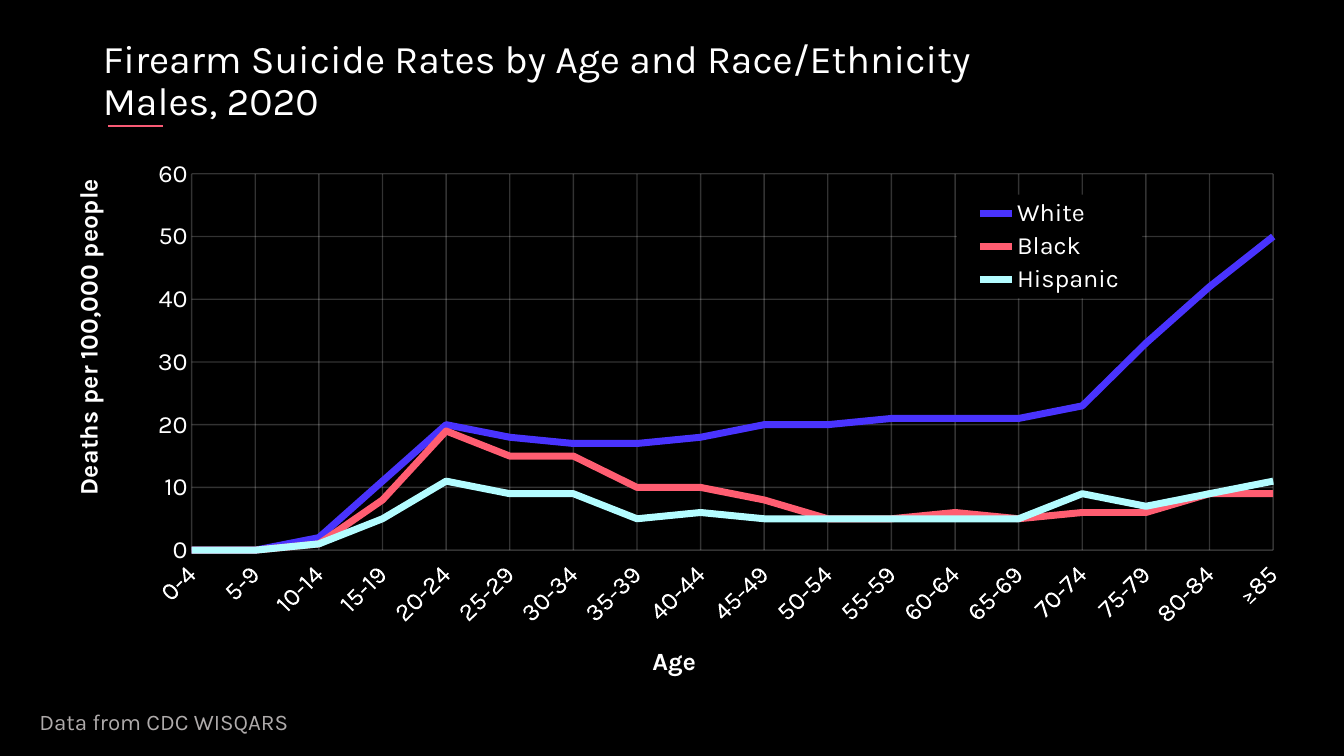
"""Build a slide with a line chart of firearm suicide rates among males by age."""
from lxml.etree import SubElement
from pptx import Presentation
from pptx.chart.data import CategoryChartData
from pptx.dml.color import RGBColor
from pptx.enum.chart import XL_CHART_TYPE, XL_LEGEND_POSITION, XL_TICK_LABEL_POSITION, XL_TICK_MARK
from pptx.enum.shapes import MSO_CONNECTOR
from pptx.enum.text import MSO_ANCHOR, MSO_AUTO_SIZE, PP_ALIGN
from pptx.oxml import parse_xml
from pptx.oxml.ns import nsdecls, qn
from pptx.util import Inches, Pt

FONT = "Karla"
COLORS = {"back": "000000", "text": "FFFFFF", "note": "AFABAB", "rule": "F85B75",
          "White": "4933FE", "Black": "FF5D71", "Hispanic": "B3FCFF"}
RATES = {
    "White": [0, 0, 2, 11, 20, 18, 17, 17, 18, 20, 20, 21, 21, 21, 23, 33, 42, 50],
    "Black": [0, 0, 1, 8, 19, 15, 15, 10, 10, 8, 5, 5, 6, 5, 6, 6, 9, 9],
    "Hispanic": [0, 0, 1, 5, 11, 9, 9, 5, 6, 5, 5, 5, 5, 5, 9, 7, 9, 11],
}


def style(font, size, color, bold=False):
    font.name = FONT
    font.size = Pt(size)
    font.bold = bold
    font.color.rgb = RGBColor.from_string(COLORS[color])


def place(part, index, inner=False, **spots):
    for old in part.findall(qn("c:layout")):
        part.remove(old)
    layout = parse_xml(f"<c:layout {nsdecls('c')}><c:manualLayout/></c:layout>")
    manual = layout[0]
    if inner:
        SubElement(manual, qn("c:layoutTarget")).set("val", "inner")
    for key in ("x", "y"):
        SubElement(manual, qn(f"c:{key}Mode")).set("val", "edge")
    for key, value in spots.items():
        SubElement(manual, qn(f"c:{key}")).set("val", str(value))
    part.insert(index, layout)


deck = Presentation()
deck.slide_width, deck.slide_height = Inches(13.33), Inches(7.5)
slide = deck.slides.add_slide(deck.slide_layouts[1])
fill = slide.background.fill
fill.solid()
fill.fore_color.rgb = RGBColor.from_string(COLORS["back"])

title, note = slide.shapes.title, slide.placeholders[1]
for box, spot, lines, size, color, anchor in (
    (title, (0.92, 0.37, 11.5, 0.88),
     ["Firearm Suicide Rates by Age and Race/Ethnicity", "Males, 2020"],
     28, "text", MSO_ANCHOR.MIDDLE),
    (note, (0.29, 7.01, 9.78, 0.42), ["Data from CDC WISQARS"], 16, "note", MSO_ANCHOR.TOP),
):
    box.left, box.top, box.width, box.height = map(Inches, spot)
    frame = box.text_frame
    frame.word_wrap = True
    frame.auto_size = MSO_AUTO_SIZE.NONE
    frame.vertical_anchor = anchor
    para = frame.paragraphs[0]
    props = para._p.get_or_add_pPr()
    props.set("marL", "0")
    props.set("indent", "0")
    SubElement(props, qn("a:buNone"))
    para.alignment = PP_ALIGN.LEFT
    para.line_spacing = 0.9
    para.space_before = Pt(0)
    for row, text in enumerate(lines):
        if row:
            para.add_line_break()
        run = para.add_run()
        run.text = text
        style(run.font, size, color)

rule = slide.shapes.add_connector(
    MSO_CONNECTOR.STRAIGHT, Inches(1.07), Inches(1.25), Inches(1.62), Inches(1.25))
rule.line.color.rgb = RGBColor.from_string(COLORS["rule"])
rule.line.width = Pt(1.25)
SubElement(rule._element.spPr, qn("a:effectLst"))

data = CategoryChartData()
data.categories = [f"{age}-{age + 4}" for age in range(0, 85, 5)] + ["≥85"]
for name, rates in RATES.items():
    data.add_series(name, rates)
chart = slide.shapes.add_chart(
    XL_CHART_TYPE.LINE, Inches(0.54), Inches(1.57), Inches(12.26), Inches(5.22), data).chart
style(chart.font, 18, "text")
chart.has_title = False
place(chart._chartSpace.chart.plotArea, 0, inner=True, x=0.111, y=0.03, w=0.875, h=0.726)

plot = chart.plots[0]
plot.vary_by_categories = False
for line in plot.series:
    line.smooth = False
    line.format.line.width = Pt(5)
    line.format.line.color.rgb = RGBColor.from_string(COLORS[line.name])

ages, deaths = chart.category_axis, chart.value_axis
for axis, text, left, top in (
    (ages, "Age", 0.48, 0.93),
    (deaths, "Deaths per 100,000 people", 0.01, 0.04),
):
    axis.major_tick_mark = axis.minor_tick_mark = XL_TICK_MARK.NONE
    axis.format.line.fill.background()
    axis.has_major_gridlines = True
    grid = axis.major_gridlines.format.line
    grid.width = Pt(1)
    grid.color.rgb = RGBColor.from_string(COLORS["text"])
    lines = axis._element.find(qn("c:majorGridlines"))
    paint = lines.find(".//" + qn("a:srgbClr"))
    SubElement(paint, qn("a:alpha")).set("val", "20000")
    style(axis.tick_labels.font, 18, "text")
    run = axis.axis_title.text_frame.paragraphs[0].add_run()
    run.text = text
    style(run.font, 18, "text", True)
    place(axis.axis_title._element, 1, x=left, y=top)

ages.tick_label_position = XL_TICK_LABEL_POSITION.LOW
ages._element.find(qn("c:txPr")).find(qn("a:bodyPr")).set("rot", "-2700000")
deaths.axis_title._element.find(".//" + qn("a:bodyPr")).set("rot", "-5400000")
deaths.minimum_scale, deaths.maximum_scale, deaths.major_unit = 0, 60, 10
for old in deaths._element.findall(qn("c:crossBetween")):
    deaths._element.remove(old)
between = parse_xml(f"<c:crossBetween {nsdecls('c')} val=\"midCat\"/>")
deaths._element.find(qn("c:crosses")).addnext(between)

chart.has_legend = True
legend = chart.legend
legend.position = XL_LEGEND_POSITION.TOP
legend.include_in_layout = True
style(legend.font, 18, "text")
place(legend._element, 1, x=0.73, y=0.07, w=0.15, h=0.2)
shade = parse_xml(
    f"<c:spPr {nsdecls('c', 'a')}><a:solidFill><a:srgbClr val=\"{COLORS['back']}\"/>"
    "</a:solidFill></c:spPr>")
legend._element.find(qn("c:txPr")).addprevious(shade)

deck.save("out.pptx")
